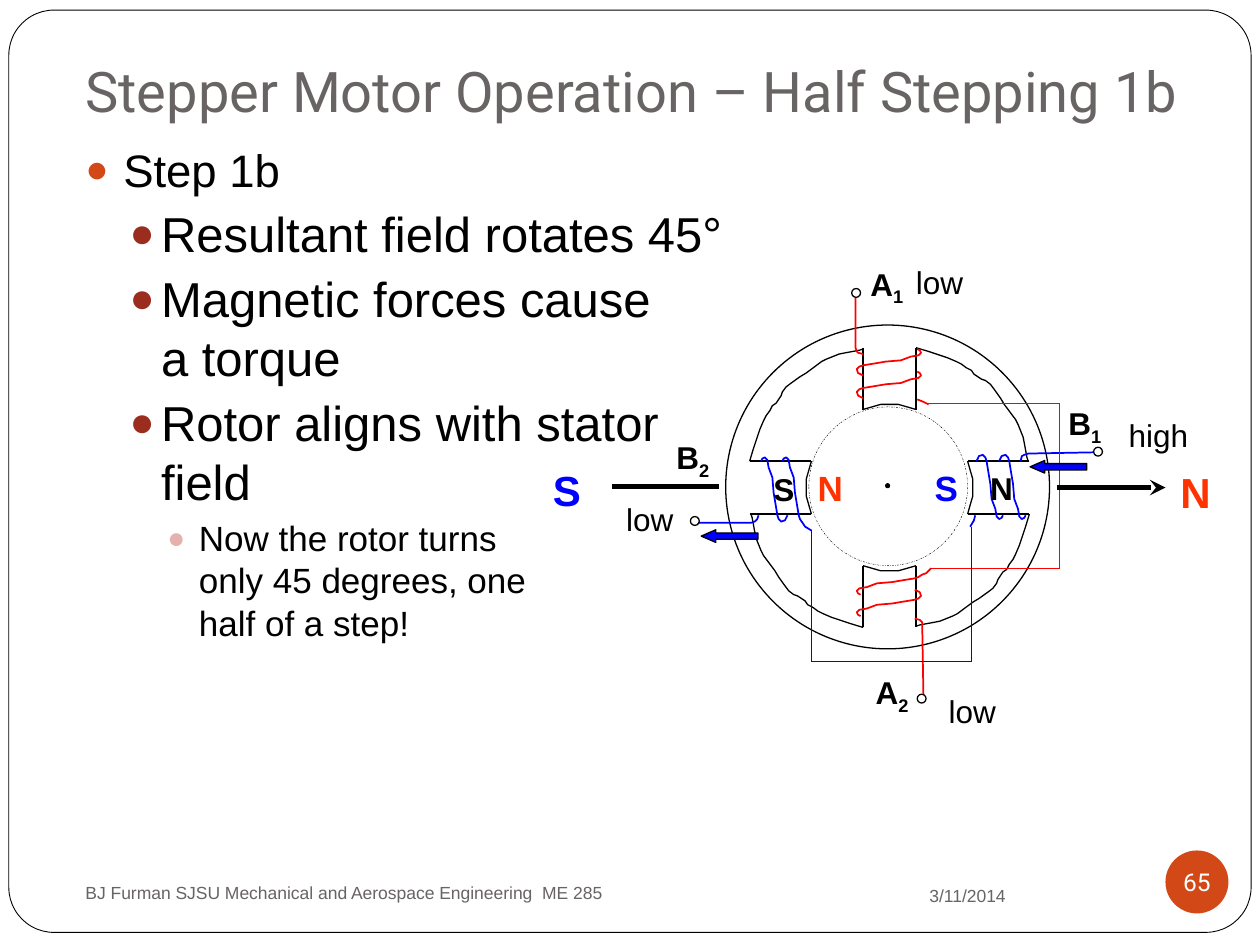
from dataclasses import dataclass

from lxml import etree
from pptx import Presentation
from pptx.dml.color import RGBColor
from pptx.enum.dml import MSO_LINE
from pptx.enum.shapes import MSO_CONNECTOR, MSO_SHAPE
from pptx.enum.text import MSO_ANCHOR, PP_ALIGN
from pptx.oxml.ns import qn
from pptx.util import Inches, Pt

ELLIPSE, ROUNDED, DOWN_ARROW = MSO_SHAPE.OVAL, MSO_SHAPE.ROUNDED_RECTANGLE, MSO_SHAPE.DOWN_ARROW
STRAIGHT, DASH_DOT = MSO_CONNECTOR.STRAIGHT, MSO_LINE.DASH_DOT
LEFT, CENTER, RIGHT = PP_ALIGN.LEFT, PP_ALIGN.CENTER, PP_ALIGN.RIGHT
TOP, MIDDLE, BOTTOM = MSO_ANCHOR.TOP, MSO_ANCHOR.MIDDLE, MSO_ANCHOR.BOTTOM


@dataclass(frozen=True)
class Theme:
    body_font: str = "Arial"
    head_font: str = "Roboto"
    black: str = "000000"
    white: str = "FFFFFF"
    gray: str = "696464"
    accent: str = "D34817"
    bullets: tuple = ("D34817", "9B2D1F", "E6B1AC")
    red: str = "FF0000"
    blue: str = "0000FF"
    north: str = "FF3300"
    title: int = 32
    body: tuple = (26, 28, 20)
    label: int = 18
    pole: int = 20
    field: int = 24
    number: int = 14
    footer: int = 10


THEME = Theme()
MOTOR_CENTER = (7.06, 3.87)
INSETS = (0.1, 0.05, 0.1, 0.05)

# Shapes of the right or top pole, turned by quarters for the others
RIM = [(7.27, 2.76), (7.37, 2.79), (7.46, 2.82), (7.52, 2.84), (7.59, 2.87), (7.63, 2.89),
       (7.67, 2.92), (7.71, 2.94), (7.73, 2.97), (7.76, 2.99), (7.79, 3.01), (7.82, 3.02),
       (7.86, 3.05), (7.89, 3.09), (7.94, 3.16), (7.97, 3.21), (8, 3.25), (8.03, 3.29),
       (8.06, 3.33), (8.08, 3.37), (8.1, 3.42), (8.12, 3.47), (8.13, 3.52), (8.15, 3.63),
       (8.16, 3.66)]
POLE_FACE = [(6.85, 3.25), (6.92, 3.23), (6.99, 3.21), (7.06, 3.21), (7.13, 3.21),
             (7.2, 3.23), (7.27, 3.25)]
LOOP = [(0, 0), (0.02, -0.04), (0.05, -0.05), (0.07, -0.03), (0.08, 0), (0.1, 0.12),
        (0.11, 0.18), (0.12, 0.3), (0.15, 0.38), (0.16, 0.44), (0.18, 0.46), (0.2, 0.45),
        (0.21, 0.43)]

BODY = [(0, "Step 1b"), (1, "Resultant field rotates 45°"),
        (1, "Magnetic forces cause\va torque"), (1, "Rotor aligns with stator \vfield"),
        (2, "Now the rotor turns\vonly 45 degrees, one\vhalf of a step!")]
# Left margin, hanging indent (inches) and space before (points) of each level
LEVELS = [(0.3, 0.3, 5.8), (0.6, 0.25, 3.7), (0.9, 0.25, 3.7)]


def color(value):
    return RGBColor.from_string(value)


def style_line(line, line_color, width):
    line.color.rgb = color(line_color)
    line.width = Pt(width)


def style_span(span, size, font=THEME.body_font, text_color=THEME.black, bold=False):
    span.font.size = Pt(size)
    span.font.name = font
    span.font.color.rgb = color(text_color)
    span.font.bold = bold


def set_frame(box, anchor, insets, wrap):
    frame = box.text_frame
    frame.word_wrap = wrap
    frame.vertical_anchor = anchor
    (frame.margin_left, frame.margin_top,
     frame.margin_right, frame.margin_bottom) = map(Inches, insets)
    return frame


def add_text(page, text, place, *, size, align=LEFT, anchor=TOP, insets=INSETS, wrap=True,
             subscript=None, box=None, **style):
    box = box or page.shapes.add_textbox(*map(Inches, place))
    para = set_frame(box, anchor, insets, wrap).paragraphs[0]
    para.alignment = align
    para.add_run().text = text
    if subscript:
        span = para.add_run()
        span.text = subscript
        span.font._element.set("baseline", "-25000")
    for span in para.runs:
        style_span(span, size, **style)


def add_bullets(page, place):
    frame = set_frame(page.shapes.add_textbox(*map(Inches, place)), TOP, INSETS, True)
    for index, (level, text) in enumerate(BODY):
        para = frame.paragraphs[0] if index == 0 else frame.add_paragraph()
        para.text = text
        para.level = level
        margin, hanging, space = LEVELS[level]
        if index:
            para.space_before = Pt(space)
        props = para._p.get_or_add_pPr()
        props.set("marL", str(Inches(margin)))
        props.set("indent", str(-Inches(hanging)))
        bullet_color = etree.SubElement(props, qn("a:buClr"))
        etree.SubElement(bullet_color, qn("a:srgbClr"), val=THEME.bullets[level])
        etree.SubElement(props, qn("a:buSzPct"), val="85000")
        etree.SubElement(props, qn("a:buFont"), typeface=THEME.body_font)
        etree.SubElement(props, qn("a:buChar"), char="●")
        for span in para.runs:
            style_span(span, THEME.body[level])


def add_shape(page, kind, place, *, fill=None, line=THEME.black, width=0.75, adjust=()):
    shape = page.shapes.add_shape(kind, *map(Inches, place))
    shape.shadow.inherit = False
    for index, value in enumerate(adjust):
        shape.adjustments[index] = value
    if fill:
        shape.fill.solid()
        shape.fill.fore_color.rgb = color(fill)
    else:
        shape.fill.background()
    if line:
        style_line(shape.line, line, width)
    else:
        shape.line.fill.background()
    return shape


def add_line(page, start, end, *, line=THEME.black, width=0.75, arrow=False):
    wire = page.shapes.add_connector(STRAIGHT, *map(Inches, (*start, *end)))
    style_line(wire.line, line, width)
    etree.SubElement(wire._element.spPr, qn("a:effectLst"))
    if arrow:
        etree.SubElement(wire.line._get_or_add_ln(), qn("a:tailEnd"), type="stealth")


def add_curve(page, points, *, line=THEME.black, width=0.75):
    points = [(Inches(x), Inches(y)) for x, y in points]
    builder = page.shapes.build_freeform(*points[0])
    builder.add_line_segments(points[1:], close=False)
    curve = builder.convert_to_shape()
    curve.shadow.inherit = False
    curve.fill.background()
    style_line(curve.line, line, width)


def turn(points, quarters, center=(0, 0)):
    """Turn points clockwise by quarters around the center."""
    for _ in range(quarters):
        points = [(center[0] - (y - center[1]), center[1] + x - center[0]) for x, y in points]
    return points


def add_winding(page, start, quarters, line, lead=()):
    points = [(start[0] + x, start[1] + y) for x, y in turn(LOOP, quarters)]
    add_curve(page, [*lead, *points[4:]] if lead else points, line=line, width=1)


def add_stator(page):
    add_shape(page, ELLIPSE, (5.76, 2.58, 2.57, 2.57), fill=THEME.white)
    for quarters in range(4):
        for x in (6.85, 7.27):
            add_line(page, *turn([(x, 2.76), (x, 3.25)], quarters, MOTOR_CENTER))
        for points in (POLE_FACE, RIM):
            add_curve(page, turn(points, quarters, MOTOR_CENTER))


def add_coils(page):
    red, blue = THEME.red, THEME.blue
    for start, quarters, line in [
            ((7.93, 3.66), 0, blue), ((7.75, 3.66), 0, blue), ((7.26, 4.68), 1, red),
            ((6.25, 4.09), 2, blue), ((6.85, 2.98), 3, red), ((6.85, 3.16), 3, red)]:
        add_winding(page, start, quarters, line)
    add_winding(page, (7.26, 4.51), 1, red, [(7.39, 4.51), (7.35, 4.55), (7.32, 4.56), (7.29, 4.58)])
    add_winding(page, (6.42, 4.09), 2, blue, [(6.44, 4.21), (6.39, 4.18), (6.37, 4.15), (6.35, 4.12)])
    # Leads from the coils to the terminals and wires
    for line, points in [
            (blue, [(8.69, 3.59), (8.16, 3.6), (8.13, 3.61), (8.11, 3.62), (8.1, 3.66)]),
            (blue, [(7.74, 4.09), (7.73, 4.13), (7.7, 4.18)]),
            (blue, [(5.53, 4.15), (5.96, 4.15), (5.99, 4.14), (6.01, 4.12), (6.02, 4.09)]),
            (red, [(7.33, 5.57), (7.32, 4.97), (7.32, 4.94), (7.3, 4.92), (7.26, 4.91)]),
            (red, [(6.79, 2.34), (6.79, 2.76), (6.8, 2.79), (6.81, 2.8), (6.85, 2.81)]),
            (red, [(7.28, 3.17), (7.33, 3.19), (7.37, 3.21)])]:
        add_curve(page, points, line=line, width=1)
    # Wires joining opposite coils
    for line, corners in [(red, [(7.36, 3.2), (8.41, 3.2), (8.41, 4.51), (7.39, 4.51)]),
                          (blue, [(7.71, 4.18), (7.71, 5.25), (6.44, 5.25), (6.44, 4.21)])]:
        for start, end in zip(corners, corners[1:]):
            add_line(page, start, end, line=line)
    for x, y in [(6.76, 2.29), (8.68, 3.55), (7.28, 5.51), (5.48, 4.1)]:
        add_shape(page, ELLIPSE, (x, y, 0.07, 0.07), fill=THEME.white)


def add_rotor_and_field(page):
    add_line(page, (8.39, 3.87), (9.25, 3.87), width=3, arrow=True)
    add_line(page, (4.86, 3.86), (5.71, 3.86), width=3)
    add_shape(page, ELLIPSE, (7.03, 3.84, 0.03, 0.03), fill=THEME.black)
    rotor = add_shape(page, ELLIPSE, (6.42, 3.23, 1.26, 1.26), width=0.25)
    rotor.line.dash_style = DASH_DOT
    for x, y in [(8.35, 3.48), (5.74, 4.03)]:
        current = add_shape(page, DOWN_ARROW, (x, y, 0.1, 0.45), fill=THEME.blue, adjust=(0.5, 1.156))
        current.rotation = 90


def add_labels(page):
    for text, subscript, x, y in [("A", "1", 6.81, 2.05), ("B", "1", 8.38, 3.16),
                                  ("A", "2", 6.85, 5.29), ("B", "2", 5.27, 3.43),
                                  ("N", None, 7.76, 3.67), ("S", None, 6.04, 3.68)]:
        add_text(page, text, (x, y, 0.58, 0.41), size=THEME.label, subscript=subscript, bold=True)
    for text, x, y, width in [("low", 7.43, 5.44, 0.58), ("low", 7.17, 2.04, 0.58),
                              ("low", 4.87, 3.92, 0.58), ("high", 8.86, 3.25, 0.67)]:
        add_text(page, text, (x, y, width, 0.4), size=THEME.label, wrap=False)
    for text, place, size, text_color in [
            ("N", (9.27, 3.65, 0.44, 0.5), THEME.field, THEME.north),
            ("S", (4.29, 3.64, 0.42, 0.5), THEME.field, THEME.blue),
            ("N", (6.39, 3.65, 0.4, 0.43), THEME.pole, THEME.north),
            ("S", (7.32, 3.65, 0.39, 0.43), THEME.pole, THEME.blue)]:
        add_text(page, text, place, size=size, text_color=text_color, bold=True, wrap=False)


def add_page_text(page):
    add_shape(page, ROUNDED, (0.07, 0.08, 9.86, 7.32), fill=THEME.white, width=0.5, adjust=(0.049,))
    add_text(page, "Stepper Motor Operation – Half Stepping 1b", (0.58, 0.3, 8.92, 0.78),
             size=THEME.title, font=THEME.head_font, text_color=THEME.gray, anchor=BOTTOM,
             insets=(0.1, 0.05, 0.1, 0.1))
    footer = dict(size=THEME.footer, text_color=THEME.gray, anchor=MIDDLE)
    add_text(page, "3/11/2014", (6.75, 6.96, 1.33, 0.29), align=RIGHT, **footer)
    add_text(page, "BJ Furman SJSU Mechanical and Aerospace Engineering  ME 285",
             (0.58, 6.92, 4.92, 0.33), **footer)
    badge = add_shape(page, ELLIPSE, (9.25, 6.75, 0.5, 0.5), fill=THEME.accent, line=None)
    add_text(page, "65", None, box=badge, size=THEME.number, font=THEME.head_font,
             text_color=THEME.white, align=CENTER, anchor=MIDDLE, insets=(0, 0, 0, 0), wrap=False)
    add_bullets(page, (0.58, 1.08, 8.92, 5.5))


def main():
    deck = Presentation()
    deck.slide_width, deck.slide_height = Inches(10), Inches(7.5)
    page = deck.slides.add_slide(deck.slide_layouts[6])
    for add_part in (add_page_text, add_stator, add_coils, add_rotor_and_field, add_labels):
        add_part(page)
    deck.save("out.pptx")


if __name__ == "__main__":
    main()
